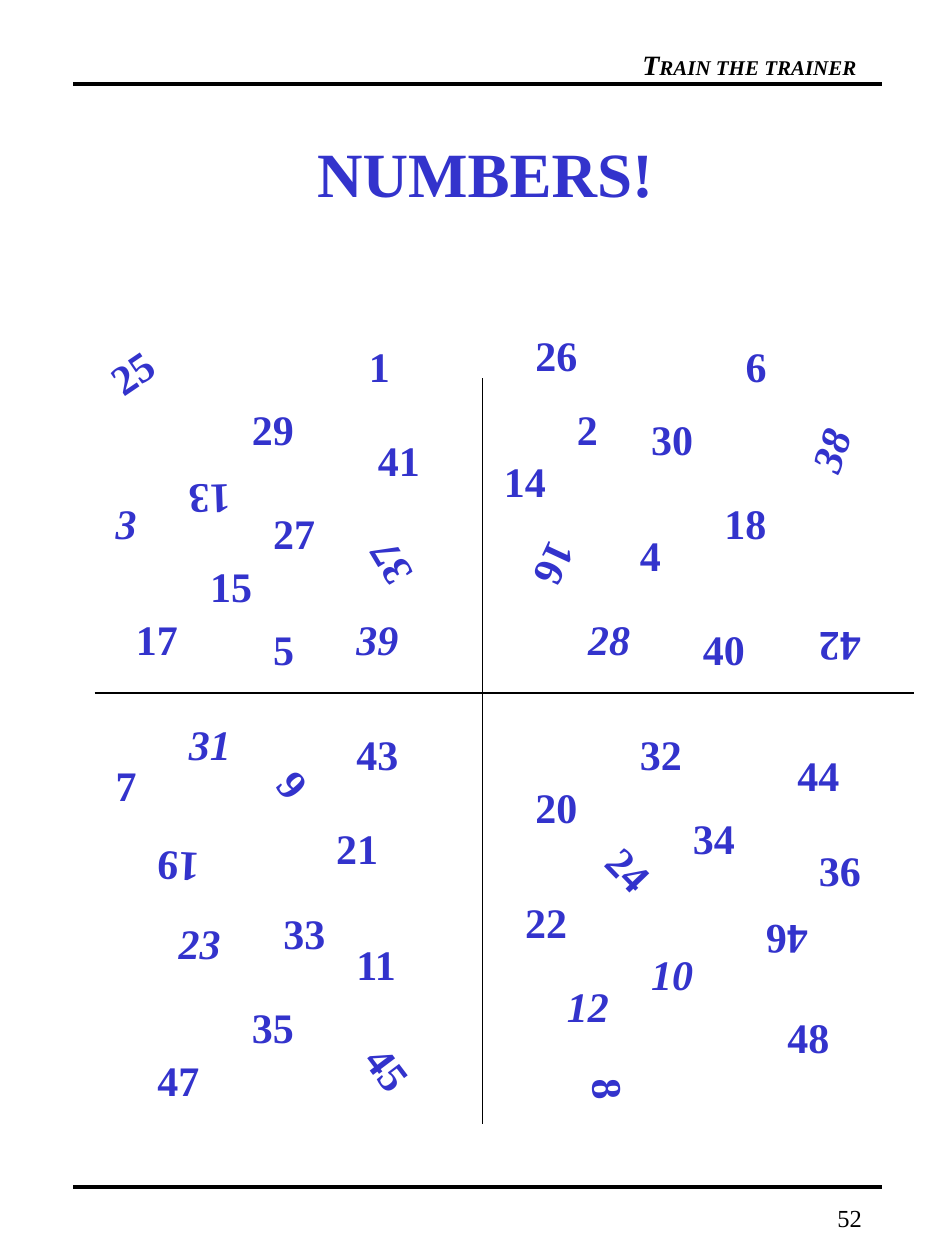
from lxml import etree
from pptx import Presentation
from pptx.dml.color import RGBColor
from pptx.enum.shapes import MSO_CONNECTOR
from pptx.enum.text import MSO_ANCHOR, MSO_AUTO_SIZE, PP_ALIGN
from pptx.oxml.ns import qn
from pptx.util import Inches, Pt

STRAIGHT = MSO_CONNECTOR.STRAIGHT
LEFT, CENTER, RIGHT = PP_ALIGN.LEFT, PP_ALIGN.CENTER, PP_ALIGN.RIGHT
TOP, MIDDLE = MSO_ANCHOR.TOP, MSO_ANCHOR.MIDDLE
FIT, FIXED = MSO_AUTO_SIZE.SHAPE_TO_FIT_TEXT, MSO_AUTO_SIZE.NONE

COLORS = {"ink": "000000", "number": "3333CC"}

# Left and top of each number's box, in inches
ODD = {
    1: (2.83, 2.65), 3: (0.82, 3.9), 5: (2.07, 4.9), 7: (0.82, 5.98),
    9: (2.15, 5.98), 11: (2.73, 7.4), 13: (1.4, 3.73), 15: (1.57, 4.4),
    17: (0.98, 4.82), 19: (1.15, 6.65), 21: (2.57, 6.48), 23: (1.32, 7.23),
    25: (0.78, 2.7), 27: (2.07, 3.98), 29: (1.9, 3.15), 31: (1.4, 5.65),
    33: (2.15, 7.15), 35: (1.9, 7.9), 37: (2.82, 4.23), 39: (2.73, 4.82),
    41: (2.9, 3.4), 43: (2.73, 5.73), 45: (2.82, 8.23), 47: (1.15, 8.32),
}
EVEN = {
    2: (4.48, 3.15), 4: (4.98, 4.15), 6: (5.82, 2.65), 8: (4.65, 8.4),
    10: (5.07, 7.48), 12: (4.4, 7.73), 14: (3.9, 3.57), 16: (4.15, 4.23),
    18: (5.65, 3.9), 20: (4.15, 6.15), 22: (4.07, 7.07), 24: (4.73, 6.65),
    26: (4.15, 2.57), 28: (4.57, 4.82), 30: (5.07, 3.23), 32: (4.98, 5.73),
    34: (5.4, 6.4), 36: (6.4, 6.65), 38: (6.32, 3.32), 40: (5.48, 4.9),
    42: (6.4, 4.9), 44: (6.23, 5.9), 46: (5.98, 7.23), 48: (6.15, 7.98),
}
ANGLES = {8: 87, 9: 51, 13: 178, 16: 115, 19: 183, 24: 46, 25: 326,
          37: 239, 38: 289, 42: 180, 45: 53, 46: 180}
ITALIC = {3, 10, 12, 23, 28, 31, 38, 39}
STACKED = {25}  # digits wrap one below the other


class Page:
    font = "Times New Roman"

    def __init__(self, slide):
        self.s = slide

    def line(self, x1, y1, x2, y2, width):
        c = self.s.shapes.add_connector(
            STRAIGHT, Inches(x1), Inches(y1), Inches(x2), Inches(y2))
        c.line.color.rgb = RGBColor.from_string(COLORS["ink"])
        c.line.width = Pt(width)
        etree.SubElement(c._element.spPr, qn("a:effectLst"))

    def text(self, box, runs, color, bold=True, italic=False, align=LEFT,
             anchor=TOP, wrap=False, fit=FIT):
        sp = self.s.shapes.add_textbox(*map(Inches, box))
        tf = sp.text_frame
        tf.word_wrap = wrap
        tf.auto_size = fit
        tf.vertical_anchor = anchor
        p = tf.paragraphs[0]
        p.alignment = align
        for words, size in runs:
            r = p.add_run()
            r.text = words
            r.font.name = self.font
            r.font.size = Pt(size)
            r.font.bold = bold
            r.font.italic = italic
            r.font.color.rgb = RGBColor.from_string(COLORS[color])
        return sp

    def number(self, n, x, y):
        width = 0.37 if n < 10 else 0.53
        stacked = n in STACKED
        sp = self.text((x, y, width, 0.5), [(str(n), 24)], "number",
                       italic=n in ITALIC, wrap=stacked,
                       fit=FIXED if stacked else FIT)
        sp.rotation = ANGLES.get(n, 0)


def main():
    prs = Presentation()
    prs.slide_width, prs.slide_height = Inches(7.5), Inches(10)
    page = Page(prs.slides.add_slide(prs.slide_layouts[6]))

    # Header and footer
    for y in (0.67, 9.42):
        page.line(0.58, y, 7, y, 2.25)
    page.text((5, 0.33, 1.9, 0.37), [("T", 16), ("RAIN THE TRAINER", 12)],
              "ink", italic=True)
    page.text((5.38, 9.5, 1.56, 0.28), [("52", 14)], "ink", bold=False,
              align=RIGHT, wrap=True, fit=FIXED)

    # Title, set a little right of centre
    title = page.text((0.42, 0.58, 6.38, 1.5), [("NUMBERS!", 36)], "number",
                      align=CENTER, anchor=MIDDLE, wrap=True, fit=FIXED)
    title.text_frame.margin_left = Inches(0.58)
    title.text_frame.margin_top = Inches(0.13)

    # Quadrant lines
    page.line(3.83, 3, 3.83, 8.92, 1)
    page.line(0.75, 5.5, 7.25, 5.5, 1)

    # Scattered numbers: odd on the left, even on the right
    for n, (x, y) in sorted({**ODD, **EVEN}.items()):
        page.number(n, x, y)

    prs.save("out.pptx")


if __name__ == "__main__":
    main()
